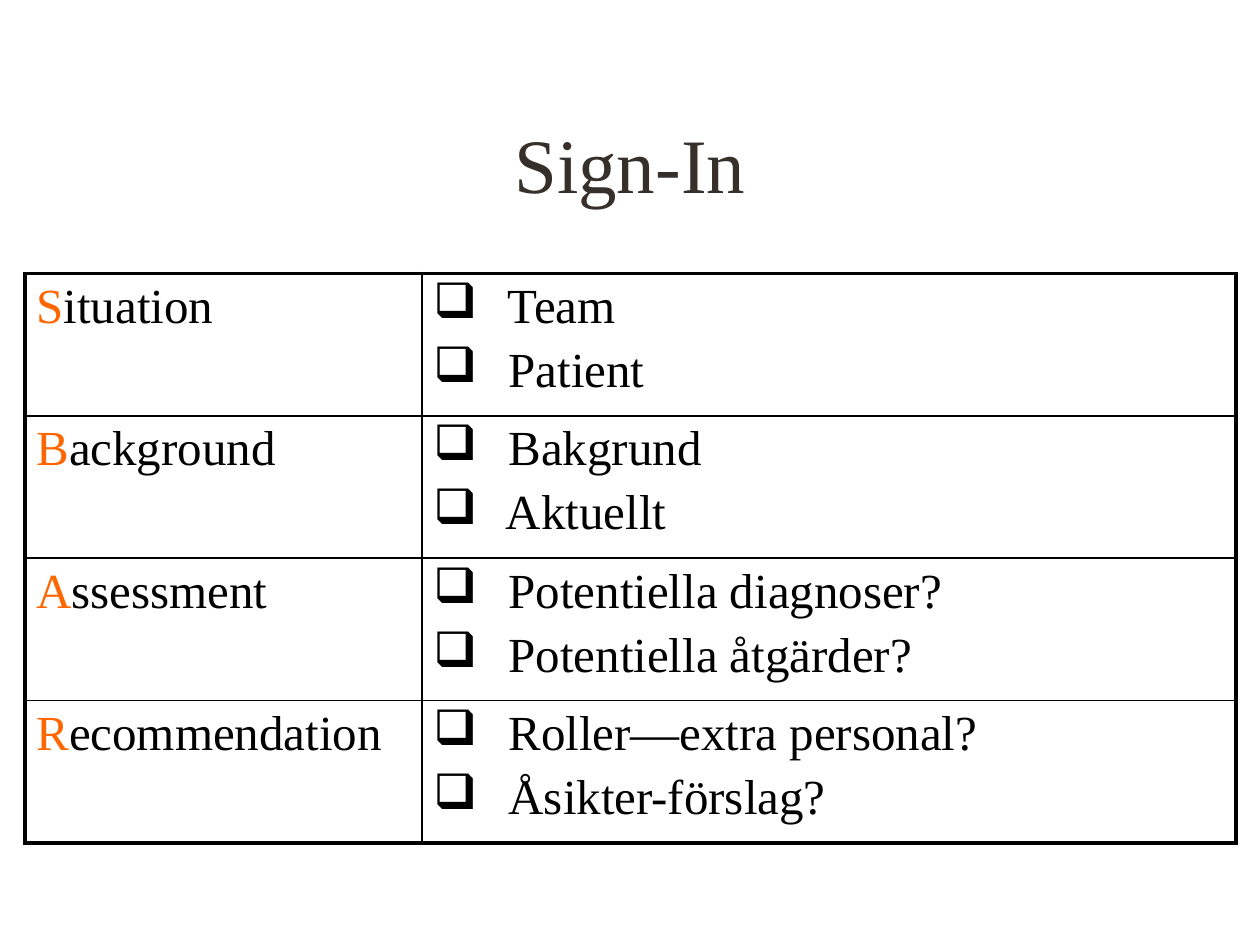
from lxml.etree import SubElement
from pptx import Presentation
from pptx.dml.color import RGBColor
from pptx.enum.text import MSO_ANCHOR, PP_ALIGN
from pptx.oxml.ns import qn
from pptx.util import Inches, Pt

COLORS = {"title": "37302A", "initial": "FF6600", "text": "000000", "border": "000000"}
FONT = "Times New Roman"
OUTER, INNER = 2.25, 1
ROWS = [
    ("Situation", ["Team", "Patient"]),
    ("Background", ["Bakgrund", "Aktuellt"]),
    ("Assessment", ["Potentiella diagnoser?", "Potentiella åtgärder?"]),
    ("Recommendation", ["Roller—extra personal?", "Åsikter-förslag?"]),
]
COL_WIDTHS = [3.15, 6.46]
ROW_HEIGHT = 1.13


def add_run(p, text, size, color):
    r = p.add_run()
    r.text = text
    r.font.name = FONT
    r.font.size = Pt(size)
    r.font.color.rgb = RGBColor.from_string(COLORS[color])


def format_paragraph(p, bullet=None):
    """Space the paragraph by 20 % and give it a hanging bullet if asked."""
    pPr = p._p.get_or_add_pPr()
    SubElement(SubElement(pPr, qn("a:spcBef")), qn("a:spcPct"), val="20000")
    if bullet:
        pPr.set("marL", str(Inches(0.5)))
        pPr.set("indent", str(Inches(-0.5)))
        SubElement(pPr, qn("a:buChar"), char=bullet)
    else:
        SubElement(pPr, qn("a:buNone"))


def set_borders(cell, widths):
    """Draw the cell sides; widths maps L, R, T and B to points."""
    tcPr = cell._tc.get_or_add_tcPr()
    for side, width in widths.items():
        ln = SubElement(tcPr, qn(f"a:ln{side}"), w=str(Pt(width)))
        fill = SubElement(ln, qn("a:solidFill"))
        SubElement(fill, qn("a:srgbClr"), val=COLORS["border"])


def add_title(slide, text):
    sp = slide.shapes.title
    sp.left, sp.top = Inches(0.75), Inches(0.67)
    sp.width, sp.height = Inches(8.5), Inches(1.25)
    tf = sp.text_frame
    tf.vertical_anchor = MSO_ANCHOR.MIDDLE
    p = tf.paragraphs[0]
    p.alignment = PP_ALIGN.CENTER
    add_run(p, text, 44, "title")


def fill_heading(cell, heading):
    p = cell.text_frame.paragraphs[0]
    format_paragraph(p)
    add_run(p, heading[0], 28, "initial")
    add_run(p, heading[1:], 28, "text")


def fill_checklist(cell, items):
    tf = cell.text_frame
    for i, item in enumerate(items):
        p = tf.add_paragraph() if i else tf.paragraphs[0]
        format_paragraph(p, "❑")
        add_run(p, f" {item}", 28, "text")


def add_sbar_table(slide):
    last = len(ROWS) - 1
    table = slide.shapes.add_table(
        len(ROWS), 2, Inches(0.2), Inches(2.17),
        Inches(sum(COL_WIDTHS)), Inches(ROW_HEIGHT * len(ROWS))).table
    table.first_row = table.horz_banding = False
    for column, width in zip(table.columns, COL_WIDTHS):
        column.width = Inches(width)
    for i, (heading, items) in enumerate(ROWS):
        table.rows[i].height = Inches(ROW_HEIGHT)
        fill_heading(table.cell(i, 0), heading)
        fill_checklist(table.cell(i, 1), items)
        for j in range(2):
            cell = table.cell(i, j)
            cell.margin_left = cell.margin_right = Inches(0.09)
            cell.margin_top = cell.margin_bottom = Inches(0.05)
            set_borders(cell, {
                "L": INNER if j else OUTER,
                "R": OUTER if j else INNER,
                "T": INNER if i else OUTER,
                "B": OUTER if i == last else INNER,
            })
            cell.fill.background()


def main():
    prs = Presentation()
    prs.slide_width, prs.slide_height = Inches(10), Inches(7.5)
    slide = prs.slides.add_slide(prs.slide_layouts[5])
    add_title(slide, "Sign-In")
    add_sbar_table(slide)
    prs.save("out.pptx")


if __name__ == "__main__":
    main()
